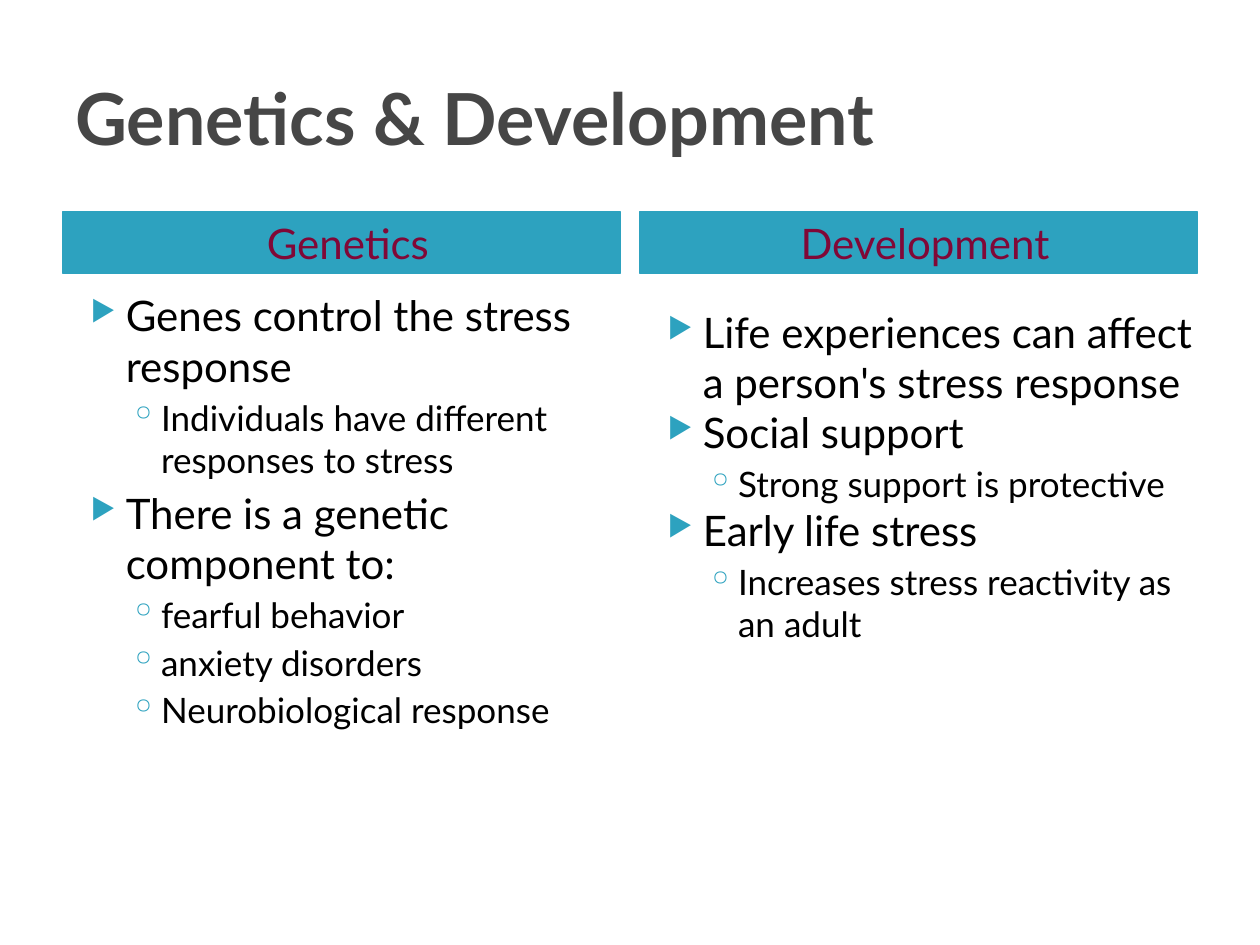
from lxml import etree
from pptx import Presentation
from pptx.dml.color import RGBColor
from pptx.enum.shapes import MSO_SHAPE
from pptx.enum.text import MSO_ANCHOR, PP_ALIGN
from pptx.oxml.ns import qn
from pptx.util import Inches, Pt

RECT = MSO_SHAPE.RECTANGLE
MIDDLE, TOP = MSO_ANCHOR.MIDDLE, MSO_ANCHOR.TOP
LEFT, CENTER = PP_ALIGN.LEFT, PP_ALIGN.CENTER

FONT = "Lato"
TEAL = RGBColor(0x2D, 0xA2, 0xBF)
MAROON = RGBColor(0x80, 0x08, 0x37)
GRAY = RGBColor(0x46, 0x46, 0x46)
BLACK = RGBColor(0, 0, 0)

TITLE = "Genetics & Development"
# Each list item is (level, text)
COLUMNS = [
    dict(heading="Genetics", list_top=2.25, list_width=4.42, gap=4, items=[
        (0, "Genes control the stress response"),
        (1, "Individuals have different responses to stress"),
        (0, "There is a genetic component to:"),
        (1, "fearful behavior"),
        (1, "anxiety disorders"),
        (1, "Neurobiological response"),
    ]),
    dict(heading="Development", list_top=2.38, list_width=4.57, gap=0, items=[
        (0, "Life experiences can affect a person's stress response"),
        (0, "Social support"),
        (1, "Strong support is protective"),
        (0, "Early life stress"),
        (1, "Increases stress reactivity as an adult"),
    ]),
]
LEVELS = [
    dict(char="▶", percent=68, margin=0.4, hang=0.28, size=24),
    dict(char="◦", percent=100, margin=0.68, hang=0.25, size=20),
]
MARGIN, COLUMN_STEP, COLUMN_WIDTH = 0.5, 4.58, 4.42
HEADING_TOP, HEADING_HEIGHT, LIST_HEIGHT = 1.68, 0.49, 4.31


def add_bullet(p, level):
    pPr = p._p.get_or_add_pPr()
    pPr.set("marL", str(Inches(level["margin"])))
    pPr.set("indent", str(-Inches(level["hang"])))
    color = etree.SubElement(pPr, qn("a:buClr"))
    etree.SubElement(color, qn("a:srgbClr"), val=str(TEAL))
    etree.SubElement(pPr, qn("a:buSzPct"), val=str(level["percent"] * 1000))
    etree.SubElement(pPr, qn("a:buChar"), char=level["char"])


def write(p, text, size, color, bold=False, align=LEFT, before=0):
    p.alignment = align
    p.space_before = Pt(before)
    r = p.add_run()
    r.text = text
    r.font.name, r.font.size, r.font.bold = FONT, Pt(size), bold
    r.font.color.rgb = color


def add_text_box(s, left, top, width, height, anchor=TOP):
    tf = s.shapes.add_textbox(*map(Inches, (left, top, width, height))).text_frame
    tf.word_wrap = True
    tf.vertical_anchor = anchor
    return tf


def add_heading(s, left, text):
    sp = s.shapes.add_shape(RECT, Inches(left), Inches(HEADING_TOP),
                            Inches(COLUMN_WIDTH), Inches(HEADING_HEIGHT))
    sp.shadow.inherit = False
    sp.fill.solid()
    sp.fill.fore_color.rgb = TEAL
    sp.line.color.rgb = TEAL
    sp.line.width = Pt(0.75)
    tf = sp.text_frame
    tf.word_wrap = True
    tf.vertical_anchor = MIDDLE
    tf.margin_left = Inches(0.2)
    write(tf.paragraphs[0], text, 24, MAROON, align=CENTER)


def add_list(s, left, column):
    tf = add_text_box(s, left, column["list_top"], column["list_width"], LIST_HEIGHT)
    for i, (depth, text) in enumerate(column["items"]):
        p = tf.paragraphs[0] if i == 0 else tf.add_paragraph()
        p.level = depth
        level = LEVELS[depth]
        before = 0 if i == 0 else (column["gap"], 3.2)[depth]
        add_bullet(p, level)
        write(p, text, level["size"], BLACK, before=before)


def main():
    prs = Presentation()
    prs.slide_width, prs.slide_height = Inches(10), Inches(7.5)
    s = prs.slides.add_slide(prs.slide_layouts[6])
    tf = add_text_box(s, MARGIN, 0.3, 9, 1.25, anchor=MIDDLE)
    write(tf.paragraphs[0], TITLE, 41, GRAY, bold=True)
    for i, column in enumerate(COLUMNS):
        left = MARGIN + i * COLUMN_STEP
        add_heading(s, left, column["heading"])
        add_list(s, left, column)
    prs.save("out.pptx")


if __name__ == "__main__":
    main()
